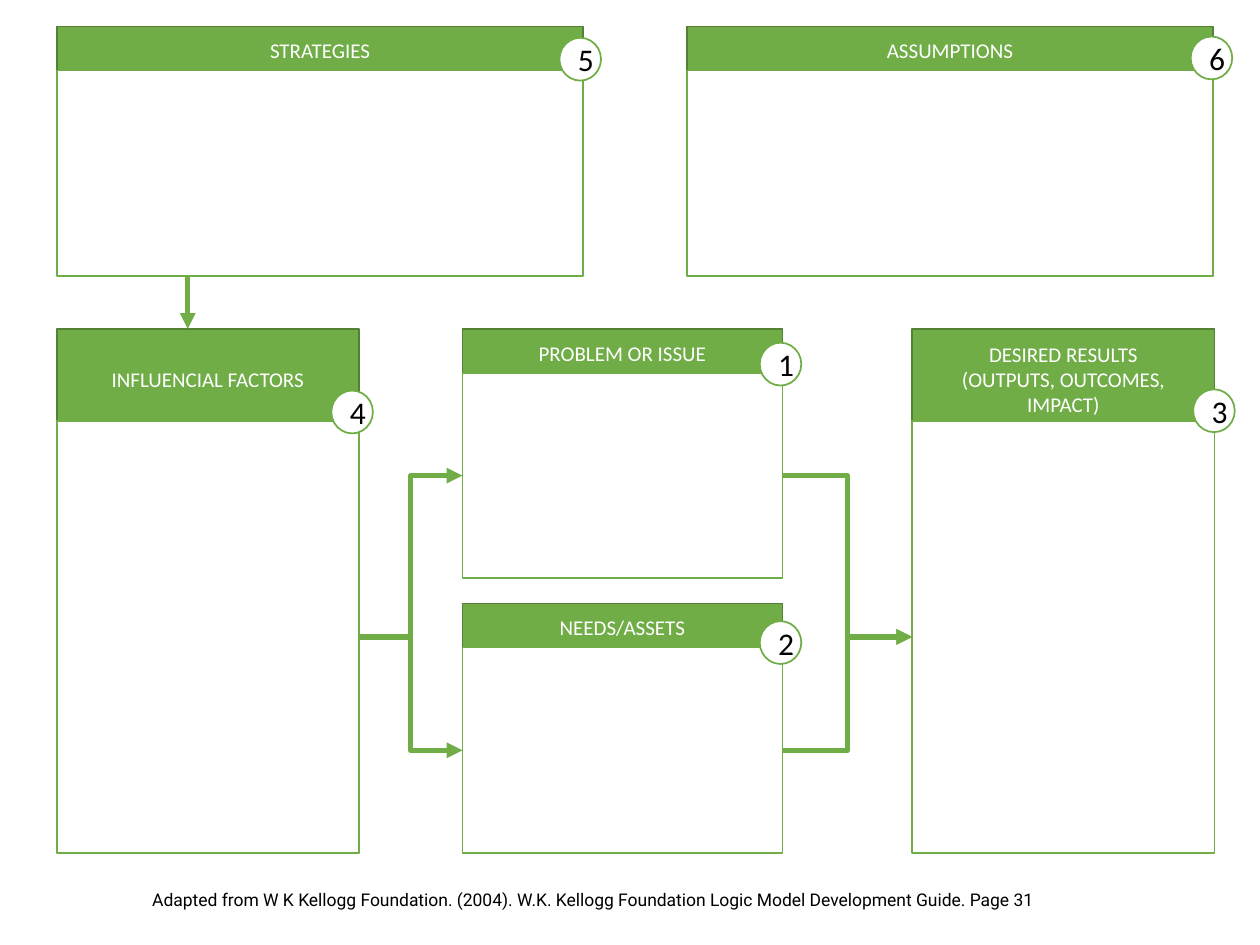
from dataclasses import dataclass

from lxml.etree import SubElement
from pptx import Presentation
from pptx.dml.color import RGBColor
from pptx.enum.shapes import MSO_CONNECTOR, MSO_SHAPE
from pptx.enum.text import MSO_ANCHOR, PP_ALIGN
from pptx.oxml.ns import qn
from pptx.util import Inches, Pt


@dataclass(frozen=True)
class Theme:
    green: RGBColor = RGBColor(0x70, 0xAD, 0x47)
    dark_green: RGBColor = RGBColor(0x53, 0x80, 0x35)
    white: RGBColor = RGBColor(0xFF, 0xFF, 0xFF)
    black: RGBColor = RGBColor(0, 0, 0)
    font: str = "Calibri"
    source_font: str = "Roboto"
    heading: Pt = Pt(12)
    number: Pt = Pt(18)
    source: Pt = Pt(10)
    outline: Pt = Pt(1)
    arrow: Pt = Pt(3)


LEFT, RIGHT = 1, 3  # connection sites of a rectangle
BADGE_W, BADGE_H = 0.33, 0.34

# key: heading lines, left, top, width, height, header height, body offset
PANELS = {
    "problem": (["PROBLEM OR ISSUE"], 3.67, 2.61, 2.54, 1.98, 0.38, 0.35),
    "needs": (["NEEDS/ASSETS"], 3.67, 4.79, 2.54, 1.98, 0.38, 0.35),
    "results": (["DESIRED RESULTS", "(OUTPUTS, OUTCOMES, IMPACT)"],
                7.24, 2.61, 2.4, 4.16, 0.8, 0.73),
    "factors": (["INFLUENCIAL FACTORS"], 0.45, 2.61, 2.4, 4.16, 0.8, 0.73),
    "strategies": (["STRATEGIES"], 0.45, 0.21, 4.18, 1.98, 0.38, 0.35),
    "assumptions": (["ASSUMPTIONS"], 5.45, 0.21, 4.18, 1.98, 0.38, 0.35),
}
FLOWS = [("factors", "problem"), ("factors", "needs"),
         ("problem", "results"), ("needs", "results")]
BADGES = {"1": (6.03, 2.72), "2": (6.03, 4.93), "3": (9.47, 3.09),
          "4": (2.63, 3.1), "5": (4.44, 0.3), "6": (9.45, 0.29)}
SOURCE = ("Adapted from W K Kellogg Foundation. (2004). W.K. Kellogg Foundation "
          "Logic Model Development Guide. Page 31")


class Diagram:
    def __init__(self, slide, theme):
        self.slide = slide
        self.theme = theme

    def add_text(self, sp, lines, size, color, font, align):
        tf = sp.text_frame
        tf.word_wrap = True
        for i, line in enumerate(lines):
            p = tf.paragraphs[0] if i == 0 else tf.add_paragraph()
            p.alignment = align
            r = p.add_run()
            r.text = line
            r.font.color.rgb = color
            for name, value in {"size": size, "name": font}.items():
                setattr(r.font, name, value)

    def shape(self, shapes, kind, box, fill, line):
        sp = shapes.add_shape(kind, *map(Inches, box))
        sp.shadow.inherit = False
        sp.fill.solid()
        sp.fill.fore_color.rgb = fill
        sp.line.color.rgb = line
        sp.line.width = self.theme.outline
        sp.text_frame.vertical_anchor = MSO_ANCHOR.MIDDLE
        return sp

    def panel(self, lines, x, y, w, h, header_h, body_dy):
        """Draw a headed box as a group and return its body."""
        t = self.theme
        shapes = self.slide.shapes.add_group_shape().shapes
        header = self.shape(shapes, MSO_SHAPE.RECTANGLE, (x, y, w, header_h),
                            t.green, t.dark_green)
        self.add_text(header, lines, t.heading, t.white, t.font, PP_ALIGN.CENTER)
        return self.shape(shapes, MSO_SHAPE.RECTANGLE,
                          (x, y + body_dy, w, h - body_dy), t.white, t.green)

    def badge(self, number, x, y):
        t = self.theme
        sp = self.shape(self.slide.shapes, MSO_SHAPE.OVAL,
                        (x, y, BADGE_W, BADGE_H), t.white, t.green)
        self.add_text(sp, [number], t.number, t.black, t.font, PP_ALIGN.CENTER)

    def arrow(self, kind, x1=0, y1=0, x2=0, y2=0):
        cxn = self.slide.shapes.add_connector(kind, *map(Inches, (x1, y1, x2, y2)))
        cxn.line.color.rgb = self.theme.green
        cxn.line.width = self.theme.arrow
        sp_pr = cxn.element.spPr
        SubElement(sp_pr.find(qn("a:ln")), qn("a:tailEnd"), type="triangle")
        SubElement(sp_pr, qn("a:effectLst"))
        return cxn

    def flow(self, start, end):
        cxn = self.arrow(MSO_CONNECTOR.ELBOW)
        cxn.begin_connect(start, RIGHT)
        cxn.end_connect(end, LEFT)

    def source(self, text, *box):
        t = self.theme
        sp = self.slide.shapes.add_textbox(*map(Inches, box))
        self.add_text(sp, [text], t.source, t.black, t.source_font, PP_ALIGN.LEFT)


def main():
    prs = Presentation()
    prs.slide_width, prs.slide_height = Inches(10), Inches(7.5)
    s = prs.slides.add_slide(prs.slide_layouts[6])
    diagram = Diagram(s, Theme())

    bodies = {key: diagram.panel(*panel) for key, panel in PANELS.items()}
    diagram.arrow(MSO_CONNECTOR.STRAIGHT, 1.49, 2.2, 1.49, 2.61)
    for start, end in FLOWS:
        diagram.flow(bodies[start], bodies[end])
    for number, place in BADGES.items():
        diagram.badge(number, *place)
    diagram.source(SOURCE, 1.11, 7.01, 8.22, 0.27)

    prs.save("out.pptx")


if __name__ == "__main__":
    main()
